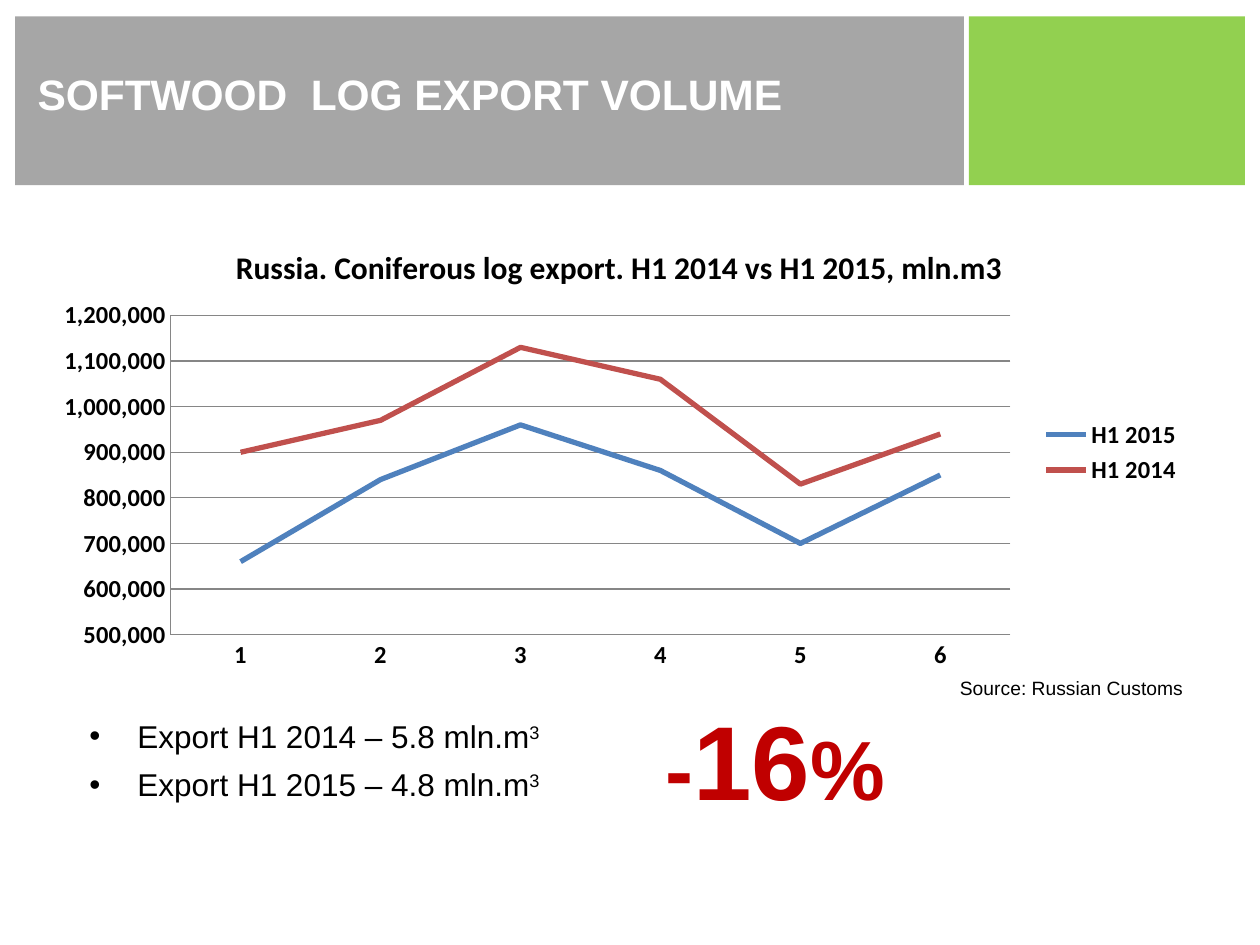
from lxml.etree import SubElement
from pptx import Presentation
from pptx.chart.data import CategoryChartData
from pptx.dml.color import RGBColor
from pptx.enum.chart import XL_CHART_TYPE, XL_LEGEND_POSITION, XL_TICK_MARK
from pptx.enum.shapes import MSO_SHAPE
from pptx.enum.text import MSO_ANCHOR, PP_ALIGN
from pptx.oxml import parse_xml
from pptx.oxml.ns import nsdecls, qn
from pptx.util import Inches, Pt

WIDE, HIGH = Inches(10), Inches(7.5)
COLS, ROWS = 100, 75
WHITE = RGBColor(0xFF, 0xFF, 0xFF)
BLACK = RGBColor(0, 0, 0)
GRAY = RGBColor(0xA6, 0xA6, 0xA6)
GREEN = RGBColor(0x92, 0xD0, 0x50)
RED = RGBColor(0xC0, 0, 0)
RULE = RGBColor(0x86, 0x86, 0x86)
SERIES = (
    ("Н1 2015", RGBColor(0x4F, 0x81, 0xBD), (660000, 840000, 960000, 860000, 700000, 850000)),
    ("Н1 2014", RGBColor(0xC0, 0x50, 0x4D), (900000, 970000, 1130000, 1060000, 830000, 940000)),
)
PLOT = {"x": 0.11, "y": 0.2, "w": 0.73, "h": 0.7}


def place(col, row, cols, rows):
    """Turn grid cells into slide lengths."""
    return (int(WIDE * col / COLS), int(HIGH * row / ROWS),
            int(WIDE * cols / COLS), int(HIGH * rows / ROWS))


def style(font, size, color=BLACK, bold=False, name="Arial"):
    """Set the look of a font."""
    font.name, font.size, font.bold = name, Pt(size), bold
    font.color.rgb = color


def block(slide, cells, color):
    """Draw a plain filled rectangle."""
    shape = slide.shapes.add_shape(MSO_SHAPE.RECTANGLE, *place(*cells))
    shape.shadow.inherit = False
    shape.fill.solid()
    shape.fill.fore_color.rgb = color
    shape.line.fill.background()


def write(slide, cells, lines, size, color=BLACK, bold=False, inset=(0.04, 0),
          align=PP_ALIGN.LEFT, anchor=MSO_ANCHOR.TOP, wrap=True, bullet=None, gap=0):
    """Write lines, each a list of (text, size or None, raised) runs."""
    frame = slide.shapes.add_textbox(*place(*cells)).text_frame
    frame.word_wrap, frame.vertical_anchor = wrap, anchor
    frame.margin_left = frame.margin_right = Inches(inset[0])
    frame.margin_top = frame.margin_bottom = Inches(inset[1])
    for i, line in enumerate(lines):
        para = frame.paragraphs[0] if i == 0 else frame.add_paragraph()
        para.alignment = align
        if i:
            para.space_before = Pt(gap)
        if bullet:
            props = para._p.get_or_add_pPr()
            props.set("marL", str(Inches(0.38)))
            props.set("indent", str(-Inches(0.38)))
            SubElement(props, qn("a:buFont")).set("typeface", "Arial")
            SubElement(props, qn("a:buChar")).set("char", bullet)
        for text, own, raised in line:
            run = para.add_run()
            run.text = text
            style(run.font, own or size, color, bold)
            if raised:
                run._r.get_or_add_rPr().set("baseline", "30000")


def frame_plot(chart):
    """Fix the inner plot area as shares of the chart."""
    area = chart._chartSpace.chart.plotArea
    for old in area.findall(qn("c:layout")):
        area.remove(old)
    parts = "".join(f'<c:{key} val="{val}"/>' for key, val in PLOT.items())
    area.insert(0, parse_xml(
        f'<c:layout {nsdecls("c")}><c:manualLayout><c:layoutTarget val="inner"/>'
        f'<c:xMode val="edge"/><c:yMode val="edge"/>{parts}</c:manualLayout></c:layout>'))


def graph(slide, cells, title):
    """Draw the line chart of monthly export."""
    data = CategoryChartData(number_format="#,##0")
    data.categories = [str(n) for n in range(1, 7)]
    for name, _, vals in SERIES:
        data.add_series(name, vals)
    chart = slide.shapes.add_chart(XL_CHART_TYPE.LINE, *place(*cells), data).chart
    style(chart.font, 14, bold=True, name="Calibri")
    chart.has_title = True
    chart.chart_title.include_in_layout = False
    head = chart.chart_title.text_frame
    head.text = title
    style(head.paragraphs[0].runs[0].font, 18, bold=True, name="Calibri")
    chart.has_legend = True
    chart.legend.position = XL_LEGEND_POSITION.RIGHT
    chart.legend.include_in_layout = False
    style(chart.legend.font, 14, bold=True, name="Calibri")
    for axis in (chart.category_axis, chart.value_axis):
        axis.major_tick_mark = axis.minor_tick_mark = XL_TICK_MARK.NONE
        style(axis.tick_labels.font, 14, bold=True, name="Calibri")
        axis.format.line.color.rgb = RULE
    axis = chart.value_axis
    axis.minimum_scale, axis.maximum_scale, axis.major_unit = 500000, 1200000, 100000
    axis.tick_labels.number_format = "#,##0"
    axis.tick_labels.number_format_is_linked = False
    axis.major_gridlines.format.line.color.rgb = RULE
    chart.plots[0].vary_by_categories = False
    for line, (_, color, _) in zip(chart.plots[0].series, SERIES):
        line.smooth = False
        line.format.line.color.rgb = color
        line.format.line.width = Pt(3)
    frame_plot(chart)


def main():
    """Build the slide and save it."""
    deck = Presentation()
    deck.slide_width, deck.slide_height = WIDE, HIGH
    slide = deck.slides.add_slide(deck.slide_layouts[6])
    block(slide, (1.2, 1.3, 75.3, 13.4), GRAY)
    block(slide, (76.9, 1.3, 21.9, 13.4), GREEN)
    write(slide, (2, 1.5, 73.2, 11.8), [[("SOFTWOOD  LOG EXPORT VOLUME", None, False)]],
          24.3, WHITE, True, inset=(0.1, 0.05), anchor=MSO_ANCHOR.MIDDLE)
    graph(slide, (3.5, 17.8, 91.3, 36.2),
          "Russia. Coniferous log export. H1 2014 vs H1 2015, mln.m3")
    facts = ("Export H1 2014 – 5.8 mln.m", "Export H1 2015 – 4.8 mln.m")
    write(slide, (6.7, 56.9, 38.6, 6.9),
          [[(fact, None, False), ("3", None, True)] for fact in facts],
          18, align=PP_ALIGN.JUSTIFY, bullet="•", gap=6)
    write(slide, (52.4, 55.2, 20.5, 10.1),
          [[("-", None, False), ("16", 60, False), ("%", None, False)]],
          48, RED, True, align=PP_ALIGN.JUSTIFY)
    write(slide, (75.2, 53.2, 19.8, 2.9), [[("Source: Russian Customs", None, False)]],
          11, inset=(0.1, 0.05), wrap=False)
    deck.save("out.pptx")


if __name__ == "__main__":
    main()
